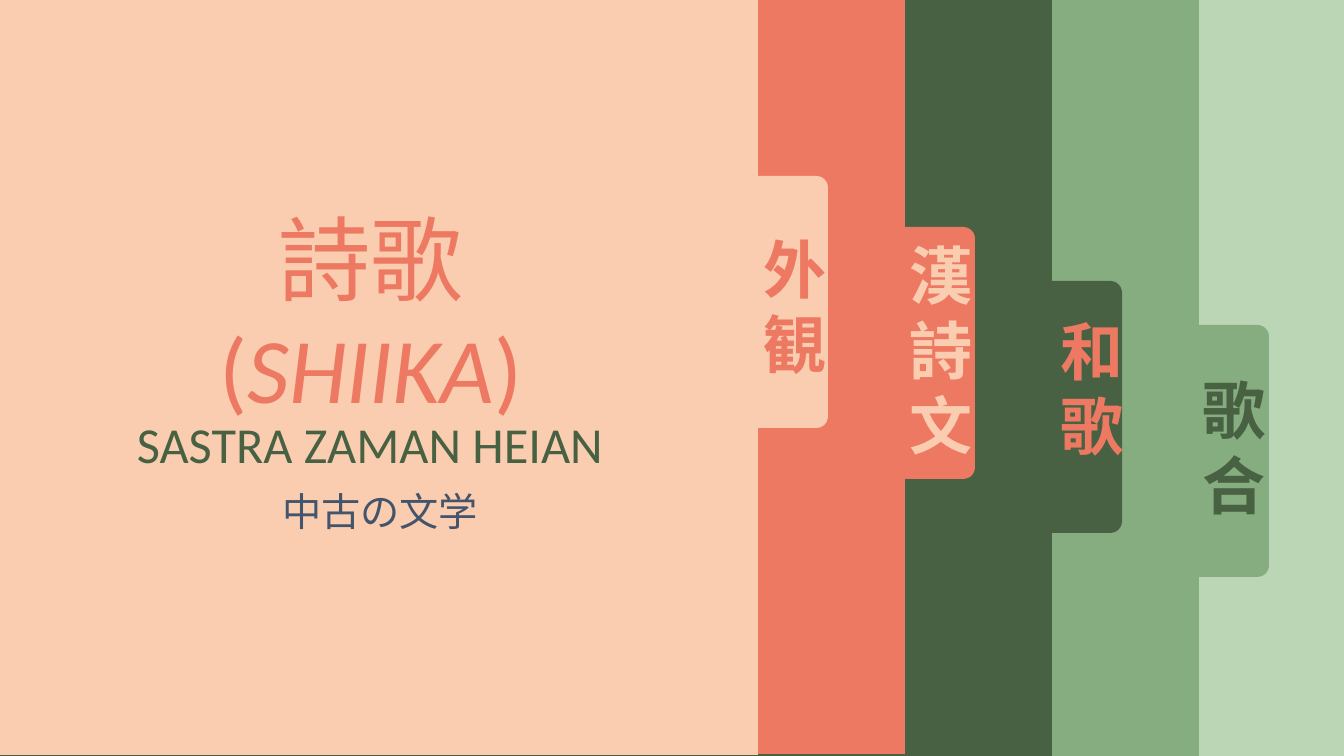
from dataclasses import dataclass

from lxml.etree import SubElement
from pptx import Presentation
from pptx.dml.color import RGBColor
from pptx.enum.shapes import MSO_SHAPE as Shape
from pptx.enum.text import MSO_ANCHOR as Anchor, MSO_AUTO_SIZE as AutoSize, PP_ALIGN as Align
from pptx.oxml.ns import qn
from pptx.util import Emu, Pt

SCALE = 914400 / 100.8


def px(n):
    """Turn whole px into EMU."""
    return Emu(round(n * SCALE))


@dataclass(frozen=True)
class Theme:
    """Colours, fonts and type sizes."""
    mint: str = "BBD6B5"
    sage: str = "86AD7F"
    forest: str = "486143"
    coral: str = "ED7962"
    peach: str = "FACDB0"
    slate: str = "44546A"
    latin: str = "Calibri"
    japanese: str = "Noto Sans CJK JP"
    title: int = 66
    tab: int = 45
    subtitle: int = 36
    caption: int = 28


def write(p, text, *, size, color, latin, japanese, bold=False, italic=False):
    """Add one formatted run to a paragraph."""
    r = p.add_run()
    r.text = text
    f = r.font
    f.size, f.bold, f.italic = Pt(size), bold, italic
    f.color.rgb = RGBColor.from_string(color)
    f.name = latin
    SubElement(r.font._element, qn("a:ea"), typeface=japanese)


class Deck:
    """Holds the theme and the current slide."""

    def __init__(self, theme):
        """Open a title-only slide with a plain background."""
        self.theme = theme
        self.prs = Presentation()
        self.prs.slide_width, self.prs.slide_height = px(1344), px(756)
        self.s = self.prs.slides.add_slide(self.prs.slide_layouts[5])
        fill = self.s.background.fill
        fill.solid()
        fill.fore_color.rgb = RGBColor.from_string(theme.mint)

    def block(self, shapes, kind, box, color, rotation=0):
        """Add a filled shape without an outline."""
        sp = shapes.add_shape(kind, *map(px, box))
        sp.shadow.inherit = False
        sp.fill.solid()
        sp.fill.fore_color.rgb = RGBColor.from_string(color)
        sp.line.fill.background()
        sp.rotation = rotation

    def fill_text(self, sp, lines, *, size, color, leading=None, inset=5, bold=False):
        """Write centred lines made of (text, font, italic) runs."""
        tf = sp.text_frame
        tf.word_wrap, tf.auto_size = True, AutoSize.SHAPE_TO_FIT_TEXT
        tf.vertical_anchor = Anchor.TOP
        tf.margin_left = tf.margin_right = px(10)
        tf.margin_top, tf.margin_bottom = px(inset), px(5)
        for i, runs in enumerate(lines):
            p = tf.add_paragraph() if i else tf.paragraphs[0]
            p.alignment = Align.CENTER
            if leading:
                p.line_spacing = Pt(leading)
            for text, font, italic in runs:
                write(p, text, size=size, color=color, latin=font,
                      japanese=self.theme.japanese, bold=bold, italic=italic)

    def label(self, shapes, box, text, font, **style):
        """Add a text box with one line of text."""
        self.fill_text(shapes.add_textbox(*map(px, box)), [[(text, font, False)]], **style)

    def panel(self, right, top, tab_top, color, text, text_box, text_color):
        """Add a sliding panel with its side tab and vertical label."""
        shapes = self.s.shapes.add_group_shape().shapes
        self.block(shapes, Shape.RECTANGLE, (right - 1086, top, 1086, 756), color)
        length, depth = 252, 70
        shift = (length - depth) // 2
        self.block(shapes, Shape.ROUND_2_SAME_RECTANGLE,
                   (right - shift, tab_top + shift, length, depth), color, 90)
        self.label(shapes, text_box, text, self.theme.japanese, size=self.theme.tab,
                   color=text_color, leading=53.6, inset=10, bold=True)

    def title(self, box, lines, **style):
        """Move and format the title placeholder."""
        sp = self.s.shapes.title
        sp.left, sp.top, sp.width, sp.height = map(px, box)
        self.fill_text(sp, lines, **style)
        tree = self.s.shapes._spTree
        tree.remove(sp._element)
        tree.append(sp._element)


def main():
    """Build the slide and save it."""
    t = Theme()
    deck = Deck(t)
    panels = [
        (0, 325, t.sage, "歌合", (1193, 362, 75, 163), t.forest),
        (0, 281, t.forest, "和歌", (1051, 303, 75, 163), t.coral),
        (-2, 227, t.coral, "漢詩文", (900, 227, 75, 239), t.peach),
        (-1, 176, t.peach, "外観", (754, 221, 75, 163), t.coral),
    ]
    for i, panel in enumerate(panels):
        deck.panel(1199 - 147 * i, *panel)
    deck.title((137, 190, 468, 234),
               [[("詩歌", t.japanese, False)],
                [("(", t.latin, False), ("SHIIKA", t.latin, True), (")", t.latin, False)]],
               size=t.title, color=t.coral, leading=78, inset=14)
    shapes = deck.s.shapes
    deck.label(shapes, (-31, 408, 802, 72), "SASTRA ZAMAN HEIAN", t.latin,
               size=t.subtitle, color=t.forest)
    deck.label(shapes, (-21, 479, 802, 57), "中古の文学", t.japanese,
               size=t.caption, color=t.slate, leading=33, inset=9)
    deck.prs.save("out.pptx")


if __name__ == "__main__":
    main()
